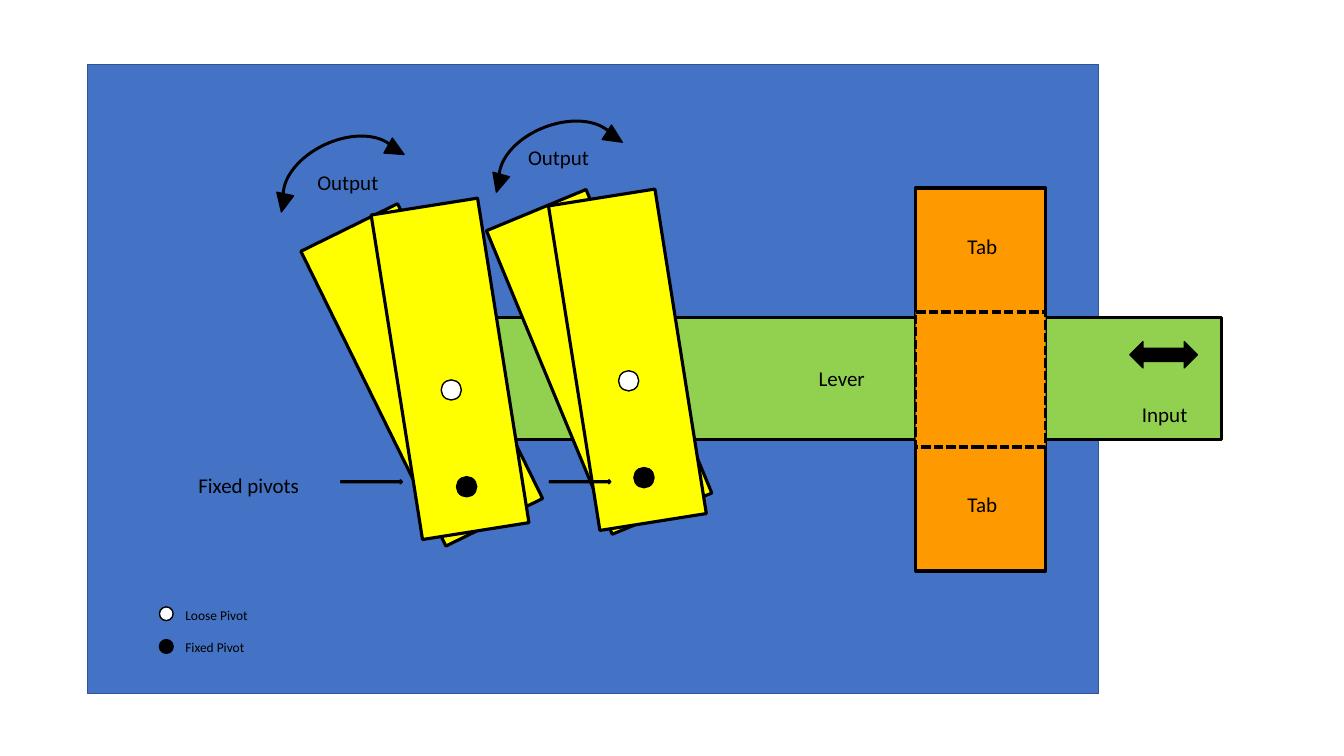
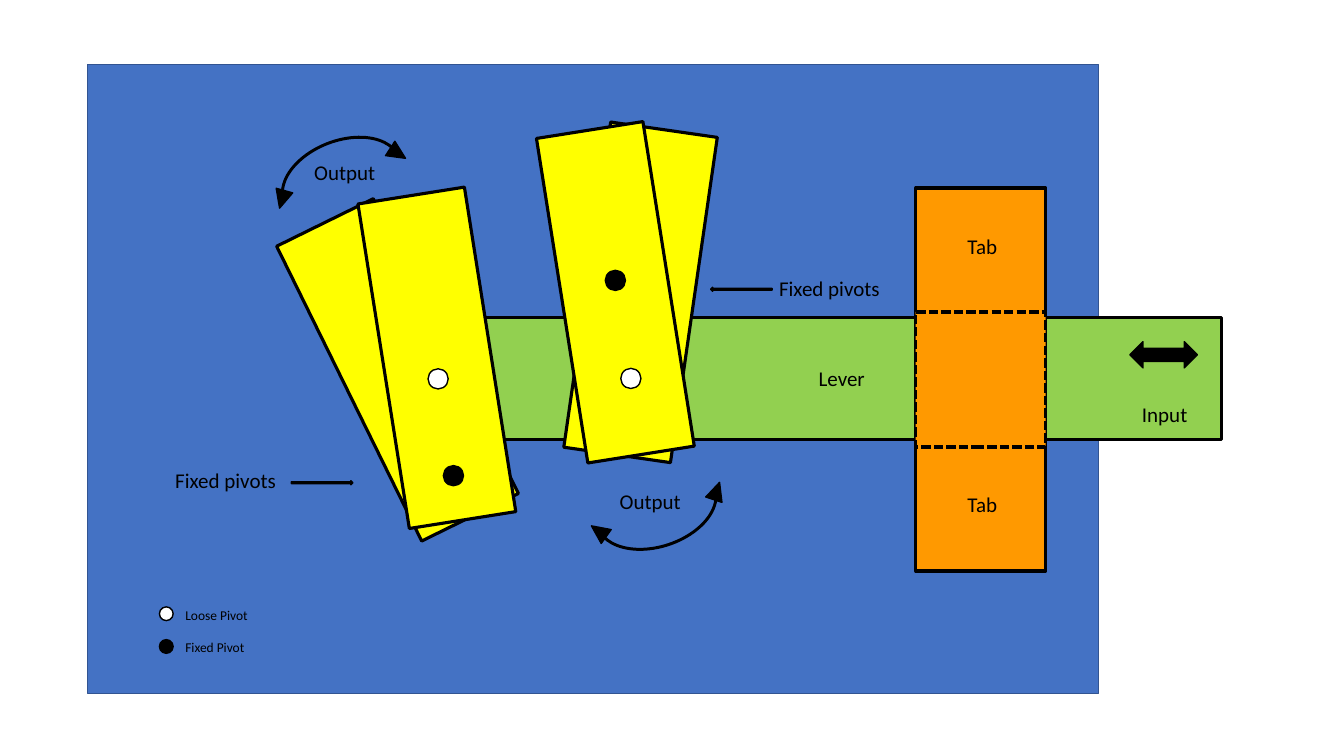
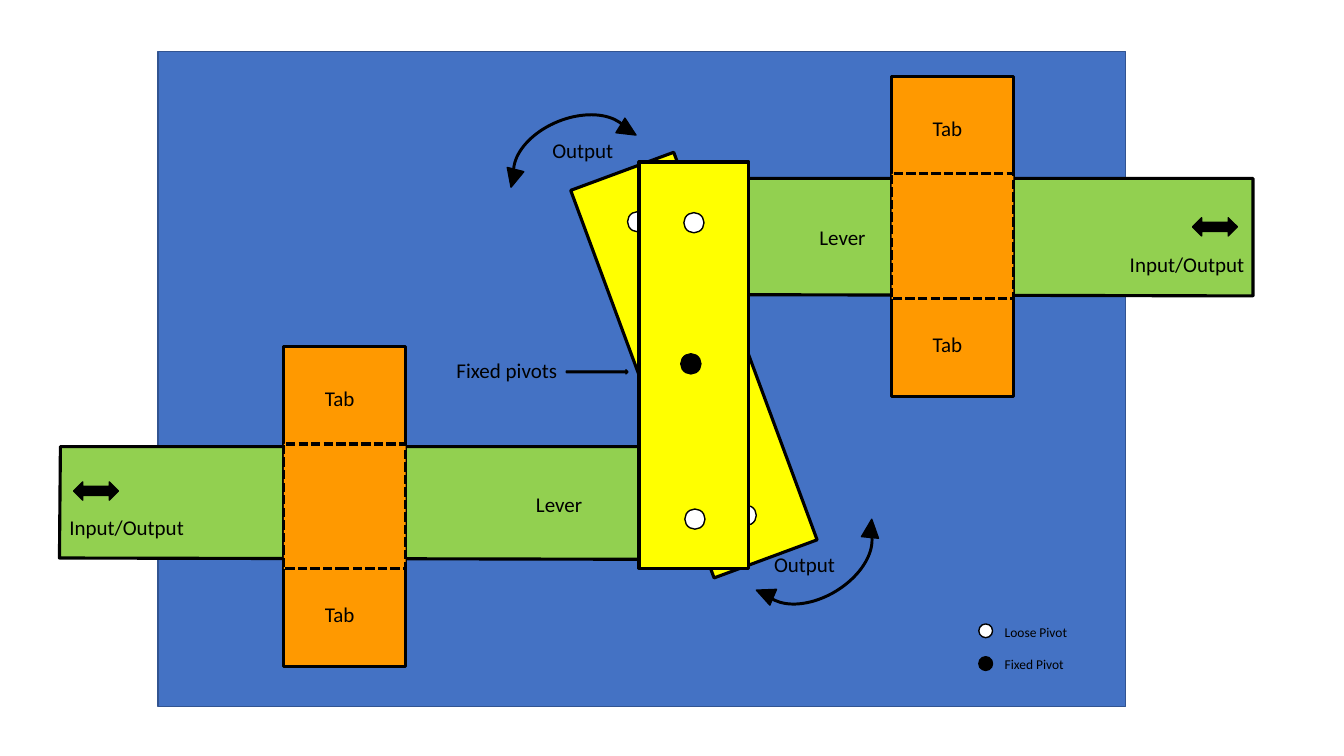
from math import cos, radians, sin

from pptx import Presentation
from pptx.dml.color import RGBColor
from pptx.enum.dml import MSO_LINE
from pptx.enum.shapes import MSO_SHAPE
from pptx.enum.text import PP_ALIGN
from pptx.util import Pt

RECTANGLE = MSO_SHAPE.RECTANGLE
ELLIPSE = MSO_SHAPE.OVAL
BLOCK_ARC = MSO_SHAPE.BLOCK_ARC
TRIANGLE = MSO_SHAPE.ISOSCELES_TRIANGLE
DOUBLE_ARROW = MSO_SHAPE.LEFT_RIGHT_ARROW
RIGHT_ARROW = MSO_SHAPE.RIGHT_ARROW
LEFT_ARROW = MSO_SHAPE.LEFT_ARROW
DASHED = MSO_LINE.SQUARE_DOT
CENTER = PP_ALIGN.CENTER

BLACK = RGBColor(0x00, 0x00, 0x00)
WHITE = RGBColor(0xFF, 0xFF, 0xFF)
BLUE = RGBColor(0x44, 0x72, 0xC4)
DARK_BLUE = RGBColor(0x32, 0x54, 0x91)
GREEN = RGBColor(0x92, 0xD0, 0x50)
YELLOW = RGBColor(0xFF, 0xFF, 0x00)
ORANGE = RGBColor(0xFF, 0x99, 0x00)

FONT = "Calibri"
LABEL_SIZE = 15
LEGEND_SIZE = 9.6
THIN, THICK = 1, 2.25
PIVOT_SIZE = 14.4
LINK_SIZE = (77, 234.7)

# Pivots as (across, along, fill), measured from the middle of a link.
LOW_PIVOTS = [(-1.5, 15, WHITE), (-1.5, 85, BLACK)]
HIGH_PIVOTS = [(1.3, 62.5, WHITE), (1.3, -8.4, BLACK)]


def paint(shape, fill, line=BLACK, weight=THIN):
    shape.shadow.inherit = False
    shape.fill.solid()
    shape.fill.fore_color.rgb = fill
    shape.line.color.rgb = line
    shape.line.width = Pt(weight)
    return shape


def draw(slide, kind, box, fill, line=BLACK, weight=THIN):
    shape = slide.shapes.add_shape(kind, *map(Pt, box))
    return paint(shape, fill, line, weight)


def draw_around(slide, kind, center, size, fill, weight=THIN, tilt=0):
    """Draw a shape about its middle, turned by tilt degrees."""
    (x, y), (width, height) = center, size
    box = (x - width / 2, y - height / 2, width, height)
    shape = draw(slide, kind, box, fill, weight=weight)
    shape.rotation = tilt
    return shape


def turned(center, across, along, tilt):
    """Return the point at an offset from center in a frame turned by tilt."""
    angle = radians(tilt)
    return (center[0] + across * cos(angle) - along * sin(angle),
            center[1] + across * sin(angle) + along * cos(angle))


def set_font(paragraph, size):
    paragraph.font.name = FONT
    paragraph.font.size = Pt(size)
    paragraph.font.color.rgb = BLACK


def add_label(slide, text, position, size=LABEL_SIZE):
    left, top = position
    box = slide.shapes.add_textbox(Pt(left), Pt(top), Pt(100), Pt(25))
    frame = box.text_frame
    frame.word_wrap = True
    frame.text = text
    for paragraph in frame.paragraphs:
        set_font(paragraph, size)
    return frame


def add_board(slide, box):
    draw(slide, RECTANGLE, box, BLUE, DARK_BLUE)


def add_pivot(slide, center, fill, size=PIVOT_SIZE):
    draw_around(slide, ELLIPSE, center, (size, size), fill)


def add_link(slide, center, tilt, pivots, size=LINK_SIZE):
    draw_around(slide, RECTANGLE, center, size, YELLOW, THICK, tilt)
    for across, along, fill in pivots:
        add_pivot(slide, turned(center, across, along, tilt), fill)


def add_tab(slide, box, window, label_left):
    """Draw a tab strip with a dashed window across its middle."""
    left, top, width, height = box
    draw(slide, RECTANGLE, box, ORANGE, weight=THICK)
    window_box = (left, top + (height - window) / 2, width, window)
    draw(slide, RECTANGLE, window_box, ORANGE, weight=THICK).line.dash_style = DASHED
    for share in (0.106, 0.78):
        add_label(slide, "Tab", (left + label_left, top + share * height))


def add_swing(slide, center, tilt, label_position):
    """Draw a curved two-headed arrow and its label."""
    arc = draw_around(slide, BLOCK_ARC, center, (89.3, 56.9), BLACK, tilt=tilt)
    for index, value in enumerate((112.42, 209.75, 0.02)):
        arc.adjustments[index] = value
    for across, along, turn in ((-44.8, -2.4, 216.6), (44.2, -3.2, 144)):
        tip = turned(center, across, along, tilt)
        draw_around(slide, TRIANGLE, tip, (12.2, 13), BLACK, tilt=tilt + turn)
    add_label(slide, "Output", label_position)


def add_pointer(slide, kind, position):
    arrow = draw(slide, kind, (*position, 44, 2.9), BLACK)
    arrow.adjustments[0] = 0.43
    arrow.adjustments[1] = 0.5


def add_legend(slide, left, top):
    add_pivot(slide, (left - 6.5, top + 8.6), WHITE, 9.8)
    add_pivot(slide, (left - 6.5, top + 32), BLACK, 9.8)
    frame = add_label(slide, "Loose Pivot\nFixed Pivot", (left, top), LEGEND_SIZE)
    frame.paragraphs[1].space_before = Pt(11.7)


def add_input_lever(slide, box):
    left, top = box[:2]
    lever = draw(slide, RECTANGLE, box, GREEN, weight=THICK)
    lever.text_frame.text = "Lever"
    paragraph = lever.text_frame.paragraphs[0]
    paragraph.alignment = CENTER
    set_font(paragraph, LABEL_SIZE)
    draw(slide, DOUBLE_ARROW, (left + 477.3, top + 17.3, 48.2, 18.7), BLACK)
    add_label(slide, "Input", (left + 478.8, top + 56.2))


def add_two_way_lever(slide, box, arrow, name, action):
    """Draw a slightly skewed lever; the last three are offsets from its corner."""
    left, top, width, height = box
    right, bottom = left + width, top + height
    outline = [(right, top), (right, bottom), (left, bottom - 1)]
    builder = slide.shapes.build_freeform(Pt(left + 0.7), Pt(top))
    builder.add_line_segments([(Pt(x), Pt(y)) for x, y in outline], close=True)
    paint(builder.convert_to_shape(), GREEN, weight=THICK)
    draw(slide, DOUBLE_ARROW, (left + arrow[0], top + arrow[1], 32, 13), BLACK)
    add_label(slide, "Lever", (left + name[0], top + name[1]))
    add_label(slide, "Input/Output", (left + action[0], top + action[1]))


def build_one_lever_slide(slide, links, swings, pointers, pivot_labels):
    """Links are listed from back to front."""
    add_board(slide, (62.6, 46.1, 722.2, 449.3))
    add_input_lever(slide, (329.8, 226.8, 542.9, 87.1))
    for link in links:
        add_link(slide, *link)
    add_tab(slide, (654.1, 134.3, 92.9, 273.6), 96.5, 29.9)
    add_legend(slide, 125.3, 429.8)
    for swing in swings:
        add_swing(slide, *swing)
    for pointer in pointers:
        add_pointer(slide, *pointer)
    for position in pivot_labels:
        add_label(slide, "Fixed pivots", position)


def build_two_lever_slide(slide):
    tab_size, window, label_left = (87.1, 229), 89.3, 22.3
    link_center = (495.7, 260.8)
    add_board(slide, (113, 36.7, 691.2, 468))
    add_legend(slide, 710.6, 442)
    add_pointer(slide, RIGHT_ARROW, (404.6, 264.2))
    add_label(slide, "Fixed pivots", (319, 252))
    add_swing(slide, (409, 112.7), -22.2, (387.4, 95))
    add_swing(slide, (582.5, 398.5), 148.9, (545.8, 390.2))
    add_two_way_lever(slide, (42.5, 319, 465.1, 80.6),
                      (10.1, 25.2), (333.3, 28.8), (0, 45.3))
    add_two_way_lever(slide, (481, 127.4, 414, 84),
                      (370.8, 28.1), (97.2, 29.6), (318.9, 49))
    add_link(slide, link_center, -20.3,
             [(-2.2, -110, WHITE), (-2.2, 113.6, WHITE)], (78.5, 295.2))
    add_link(slide, link_center, 0,
             [(0, -101.7, WHITE), (-2.2, -0.9, BLACK), (0.7, 110, WHITE)],
             (78.5, 290.2))
    for corner in ((202.7, 247.3), (636.8, 54.4)):
        add_tab(slide, corner + tab_size, window, label_left)


def main():
    presentation = Presentation()
    presentation.slide_width, presentation.slide_height = Pt(960), Pt(540)
    blank = presentation.slide_layouts[6]

    build_one_lever_slide(
        presentation.slides.add_slide(blank),
        links=[((301.3, 267.8), -26.2, LOW_PIVOTS),
               ((428, 258.5), -22.5, LOW_PIVOTS),
               ((448.2, 257), -9, LOW_PIVOTS),
               ((321.5, 263.5), -9, LOW_PIVOTS)],
        swings=[((398.9, 117), -21.2, (370.1, 99.4)),
                ((244.1, 128.5), -24.6, (219.6, 117.4))],
        pointers=[(RIGHT_ARROW, (243.4, 342.7)), (RIGHT_ARROW, (392.4, 342.7))],
        pivot_labels=[(134.6, 334.1)])

    build_one_lever_slide(
        presentation.slides.add_slide(blank),
        links=[((284, 264.2), -26.2, LOW_PIVOTS),
               ((457.6, 208.8), 8.2, HIGH_PIVOTS),
               ((312.1, 255.6), -9, LOW_PIVOTS),
               ((439.6, 208.8), -9, HIGH_PIVOTS)],
        swings=[((468.7, 362.5), 161.7, (435.6, 345.6)),
                ((244.1, 128.5), -21.1, (217.4, 110.2))],
        pointers=[(RIGHT_ARROW, (208.1, 343.4)), (LEFT_ARROW, (507.6, 205.2))],
        pivot_labels=[(118.1, 330.5), (549.4, 193)])

    build_two_lever_slide(presentation.slides.add_slide(blank))
    presentation.save("out.pptx")


if __name__ == "__main__":
    main()
